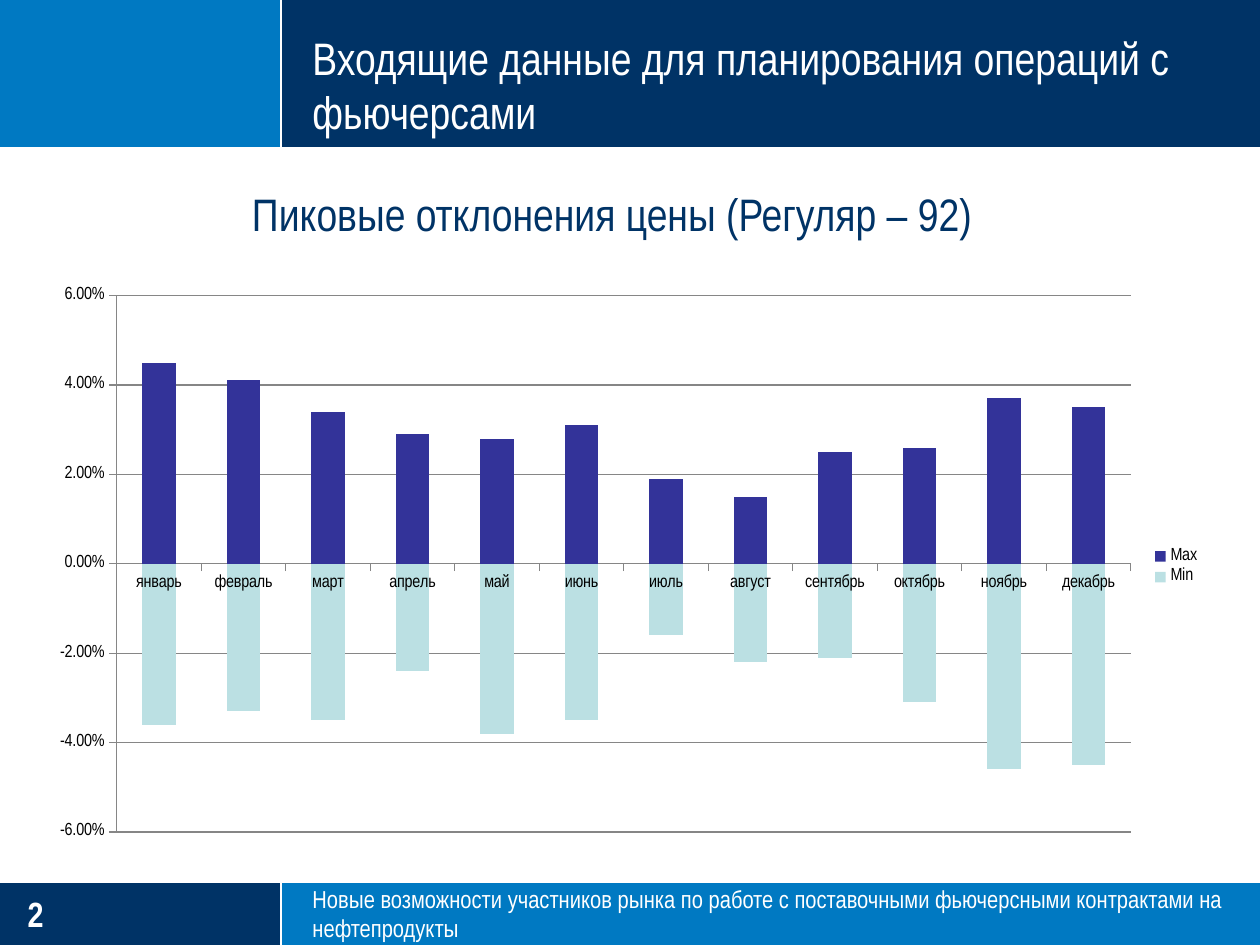
from lxml import etree
from pptx import Presentation
from pptx.chart.data import CategoryChartData
from pptx.dml.color import RGBColor
from pptx.enum.chart import XL_CHART_TYPE, XL_LEGEND_POSITION, XL_TICK_LABEL_POSITION, XL_TICK_MARK
from pptx.enum.shapes import MSO_CONNECTOR, MSO_SHAPE
from pptx.enum.text import MSO_ANCHOR
from pptx.oxml import parse_xml
from pptx.oxml.ns import nsdecls, qn
from pptx.util import Cm, Pt

RECTANGLE = MSO_SHAPE.RECTANGLE
STRAIGHT = MSO_CONNECTOR.STRAIGHT
TOP, MIDDLE, BOTTOM = MSO_ANCHOR.TOP, MSO_ANCHOR.MIDDLE, MSO_ANCHOR.BOTTOM
STACKED = XL_CHART_TYPE.COLUMN_STACKED
LEGEND_RIGHT = XL_LEGEND_POSITION.RIGHT
NEXT_TO_AXIS = XL_TICK_LABEL_POSITION.NEXT_TO_AXIS
TICK_OUT, TICK_NONE = XL_TICK_MARK.OUTSIDE, XL_TICK_MARK.NONE

FONT = "Arial Narrow"
COLORS = {
    "navy": "003366", "blue": "0079C2", "white": "FFFFFF", "black": "000000",
    "axis": "868686", "min": "BBE0E3", "max": "333399",
}

TITLE = "Входящие данные для планирования операций с фьючерсами"
SUBTITLE = "Пиковые отклонения цены (Регуляр – 92)"
FOOTER = ("Новые возможности участников рынка по работе с поставочными "
          "фьючерсными контрактами на нефтепродукты")
PAGE_NUMBER = "2"

MONTHS = ["январь", "февраль", "март", "апрель", "май", "июнь",
          "июль", "август", "сентябрь", "октябрь", "ноябрь", "декабрь"]
DEVIATIONS = [
    ("Min", "min", [-0.036, -0.033, -0.035, -0.024, -0.038, -0.035,
                    -0.016, -0.022, -0.021, -0.031, -0.046, -0.045]),
    ("Max", "max", [0.045, 0.041, 0.034, 0.029, 0.028, 0.031,
                    0.019, 0.015, 0.025, 0.026, 0.037, 0.035]),
]

WIDTH, HEIGHT = 25.4, 19.05
SIDE = 5.67
HEADER = 2.98
FOOTER_TOP = 17.78
FOOTER_HEIGHT = HEIGHT - FOOTER_TOP
TEXT_LEFT, TEXT_WIDTH = 6.3, 18.49
PLOT_AREA = {"x": 0.07, "y": 0.03, "w": 0.86, "h": 0.93}

BANDS = [
    (0, 0, WIDTH, HEADER, "navy"),
    (0, FOOTER_TOP, WIDTH, FOOTER_HEIGHT, "blue"),
    (0, 0, SIDE, HEADER, "blue"),
    (0, FOOTER_TOP, SIDE, FOOTER_HEIGHT, "navy"),
]
RULES = [
    (SIDE, FOOTER_TOP, SIDE, HEIGHT),
    (0, HEADER, WIDTH, HEADER),
    (0, FOOTER_TOP, WIDTH, FOOTER_TOP),
    (SIDE, 0, SIDE, HEADER),
]


def color(name):
    return RGBColor.from_string(COLORS[name])


def add_band(page, left, top, width, height, fill):
    band = page.shapes.add_shape(RECTANGLE, Cm(left), Cm(top), Cm(width), Cm(height))
    band.shadow.inherit = False
    band.fill.solid()
    band.fill.fore_color.rgb = color(fill)
    band.line.fill.background()


def add_rule(page, *ends):
    rule = page.shapes.add_connector(STRAIGHT, *(Cm(end) for end in ends))
    rule.line.color.rgb = color("white")
    rule.line.width = Pt(1.25)
    properties = rule.element.find(qn("p:spPr"))
    etree.SubElement(properties, qn("a:effectLst"))


def add_text(page, text, *, at, size, fill="white", bold=False, anchor=TOP):
    box = page.shapes.add_textbox(*(Cm(length) for length in at))
    frame = box.text_frame
    frame.word_wrap = True
    frame.vertical_anchor = anchor
    frame.margin_left = frame.margin_right = frame.margin_top = frame.margin_bottom = 0
    span = frame.paragraphs[0].add_run()
    span.text = text
    span.font.name = FONT
    span.font.size = Pt(size)
    span.font.bold = bold
    span.font.color.rgb = color(fill)


def place_plot(chart):
    plot_area = chart.element.find(".//" + qn("c:plotArea"))
    for layout in plot_area.findall(qn("c:layout")):
        plot_area.remove(layout)
    modes = '<c:xMode val="edge"/><c:yMode val="edge"/>'
    sizes = "".join(f'<c:{key} val="{value}"/>' for key, value in PLOT_AREA.items())
    plot_area.insert(0, parse_xml(
        f'<c:layout {nsdecls("c")}><c:manualLayout><c:layoutTarget val="inner"/>'
        f"{modes}{sizes}</c:manualLayout></c:layout>"))


def add_deviation_chart(page):
    data = CategoryChartData(number_format="0.00%")
    data.categories = MONTHS
    for name, _, values in DEVIATIONS:
        data.add_series(name, values)
    chart = page.shapes.add_chart(STACKED, Cm(0.69), Cm(5.61), Cm(23.77), Cm(11.63), data).chart
    chart.has_title = False
    chart.font.name = FONT
    chart.font.size = Pt(10)
    chart.font.color.rgb = color("black")
    chart.has_legend = True
    chart.legend.position = LEGEND_RIGHT
    chart.legend.include_in_layout = False

    plot = chart.plots[0]
    plot.gap_width = 150
    plot.overlap = 100
    plot.vary_by_categories = False
    for series, (_, fill, _) in zip(plot.series, DEVIATIONS):
        series.invert_if_negative = False
        series.format.fill.solid()
        series.format.fill.fore_color.rgb = color(fill)

    for axis in (chart.category_axis, chart.value_axis):
        axis.major_tick_mark = TICK_OUT
        axis.minor_tick_mark = TICK_NONE
        axis.tick_label_position = NEXT_TO_AXIS
        axis.format.line.color.rgb = color("axis")
    prices = chart.value_axis
    prices.minimum_scale, prices.maximum_scale, prices.major_unit = -0.06, 0.06, 0.02
    prices.tick_labels.number_format = "0.00%"
    prices.tick_labels.number_format_is_linked = False
    prices.has_major_gridlines = True
    prices.major_gridlines.format.line.color.rgb = color("axis")
    place_plot(chart)


def main():
    deck = Presentation()
    deck.slide_width, deck.slide_height = Cm(WIDTH), Cm(HEIGHT)
    page = deck.slides.add_slide(deck.slide_layouts[6])
    for band in BANDS:
        add_band(page, *band)
    for rule in RULES:
        add_rule(page, *rule)
    add_text(page, TITLE, at=(TEXT_LEFT, 0, TEXT_WIDTH, 2.8), size=26, anchor=BOTTOM)
    add_text(page, FOOTER, at=(TEXT_LEFT, FOOTER_TOP, TEXT_WIDTH, FOOTER_HEIGHT),
             size=14, anchor=MIDDLE)
    add_text(page, PAGE_NUMBER, at=(0.56, 17.98, 4.14, 0.86), size=20, bold=True, anchor=MIDDLE)
    add_deviation_chart(page)
    add_text(page, SUBTITLE, at=(5.08, 3.76, 14.68, 1.68), size=26, fill="navy")
    deck.save("out.pptx")


if __name__ == "__main__":
    main()
